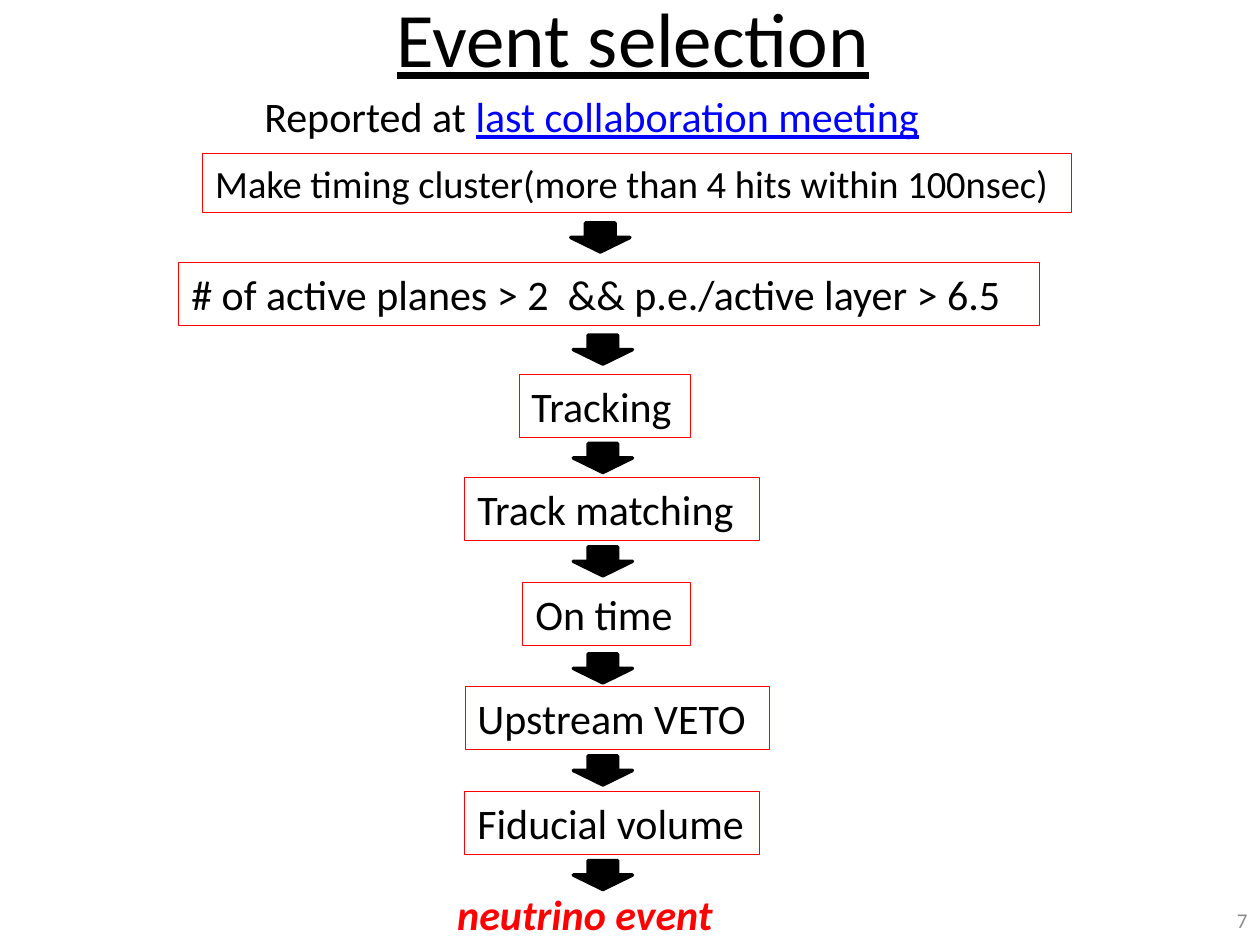
from pptx import Presentation
from pptx.dml.color import RGBColor
from pptx.enum.shapes import MSO_SHAPE
from pptx.enum.text import MSO_ANCHOR, PP_ALIGN
from pptx.util import Inches, Pt

RECT, DOWN_ARROW = MSO_SHAPE.RECTANGLE, MSO_SHAPE.DOWN_ARROW
TOP, MIDDLE = MSO_ANCHOR.TOP, MSO_ANCHOR.MIDDLE
LEFT, CENTER, RIGHT = PP_ALIGN.LEFT, PP_ALIGN.CENTER, PP_ALIGN.RIGHT
TITLE_ONLY = 5

COLORS = {"text": "000000", "accent": "FF0000", "link": "0000FF", "page": "8C8C8C"}
FONT = "Calibri"
BOX_H = 0.5
ARROW_W, ARROW_H = 0.47, 0.23

# Selection steps: text, size, box (left, top, width, height), arrow (left, top)
STEPS = [
    ("Make timing cluster(more than 4 hits within 100nsec)", 22,
     (1.61, 1.22, 6.89, 0.47), (4.53, 1.77)),
    ("# of active planes > 2  && p.e./active layer > 6.5", 24,
     (1.42, 2.08, 6.83, BOX_H), (4.55, 2.66)),
    ("Tracking", 24, (4.12, 2.97, 1.36, BOX_H), (4.55, 3.52)),
    ("Track matching", 24, (3.69, 3.79, 2.34, BOX_H), (4.55, 4.34)),
    ("On time", 24, (4.15, 4.62, 1.33, BOX_H), (4.55, 5.19)),
    ("Upstream VETO", 24, (3.69, 5.45, 2.42, BOX_H), (4.55, 6)),
    ("Fiducial volume", 24, (3.69, 6.28, 2.34, BOX_H), (4.55, 6.83)),
]


def inches(box):
    return [Inches(v) for v in box]


def rgb(name):
    return RGBColor.from_string(COLORS[name])


def write(sp, runs, align=LEFT, anchor=TOP):
    """Fill a shape with one paragraph of (text, color, font formats) runs."""
    tf = sp.text_frame
    tf.word_wrap = True
    tf.vertical_anchor = anchor
    p = tf.paragraphs[0]
    p.alignment = align
    for text, color, formats in runs:
        r = p.add_run()
        r.text = text
        r.font.name = FONT
        r.font.color.rgb = rgb(color)
        for name, value in formats.items():
            setattr(r.font, name, value)


def add_title(s, box):
    sp = s.shapes.title
    sp.left, sp.top, sp.width, sp.height = inches(box)
    write(sp, [("Event selection", "text", {"size": Pt(44), "underline": True})],
          CENTER, MIDDLE)


def add_text(s, box, runs, **layout):
    write(s.shapes.add_textbox(*inches(box)), runs, **layout)


def add_step(s, box, text, size):
    sp = s.shapes.add_shape(RECT, *inches(box))
    sp.shadow.inherit = False
    sp.fill.background()
    sp.line.color.rgb = rgb("accent")
    sp.line.width = Pt(0.5)
    write(sp, [(text, "text", {"size": Pt(size)})])


def add_arrow(s, left, top):
    sp = s.shapes.add_shape(DOWN_ARROW, *inches((left, top, ARROW_W, ARROW_H)))
    sp.shadow.inherit = False
    sp.fill.solid()
    sp.fill.fore_color.rgb = rgb("text")
    sp.line.color.rgb = rgb("text")
    sp.line.width = Pt(2)


def main():
    prs = Presentation()
    prs.slide_width, prs.slide_height = Inches(10), Inches(7.5)
    s = prs.slides.add_slide(prs.slide_layouts[TITLE_ONLY])
    body = {"size": Pt(24)}

    # Heading
    add_title(s, (-0.09, -0.17, 10.23, 0.93))
    add_text(s, (2, 0.67, 5.5, BOX_H), [
        ("Reported at ", "text", body),
        ("last collaboration meeting", "link", {**body, "underline": True}),
    ])

    # Flow of selection steps
    for text, size, box, arrow in STEPS:
        add_step(s, box, text, size)
        add_arrow(s, *arrow)

    # Outcome
    add_text(s, (3.53, 7, 2.58, BOX_H),
             [("neutrino event", "accent", {**body, "bold": True, "italic": True})])

    # Page number
    add_text(s, (9.14, 7.1, 0.86, 0.4), [("7", "page", {"size": Pt(12)})],
             align=RIGHT, anchor=MIDDLE)

    prs.save("out.pptx")


if __name__ == "__main__":
    main()
